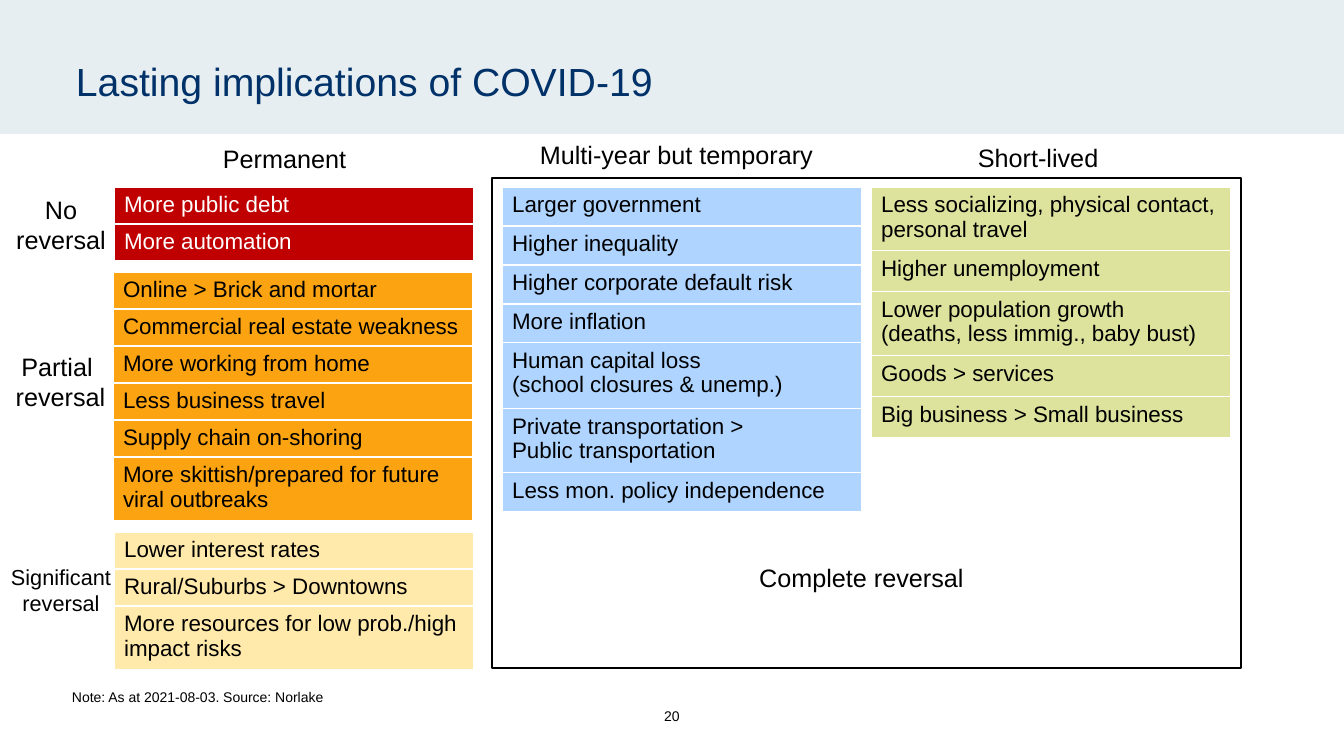
"""Build a slide of the lasting implications of COVID-19, sorted by duration and reversal."""
from lxml import etree
from pptx import Presentation
from pptx.dml.color import RGBColor
from pptx.enum.shapes import MSO_SHAPE
from pptx.enum.text import MSO_ANCHOR, PP_ALIGN
from pptx.oxml.ns import qn
from pptx.util import Pt

SCALE = 914400 / 100.8
RECT = MSO_SHAPE.RECTANGLE
LEFT, CENTER = PP_ALIGN.LEFT, PP_ALIGN.CENTER
TOP, MIDDLE = MSO_ANCHOR.TOP, MSO_ANCHOR.MIDDLE
BLACK = RGBColor(0x00, 0x00, 0x00)
WHITE = RGBColor(0xFF, 0xFF, 0xFF)
NAVY = RGBColor(0x00, 0x31, 0x68)
MIST = RGBColor(0xE7, 0xEE, 0xF1)
RED = RGBColor(0xC0, 0x00, 0x00)
ORANGE = RGBColor(0xFC, 0xA3, 0x11)
CREAM = RGBColor(0xFF, 0xE9, 0xAB)
BLUE = RGBColor(0xAE, 0xD4, 0xFF)
GREEN = RGBColor(0xDD, 0xE3, 0x9D)


def px(*sizes):
    """Turn px lengths into EMU."""
    return [round(size * SCALE) for size in sizes]


def write(frame, text, size, color=BLACK, align=LEFT):
    """Write each line of text as a paragraph."""
    frame.word_wrap = True
    for i, line in enumerate(text.split("\n")):
        para = frame.add_paragraph() if i else frame.paragraphs[0]
        para.alignment = align
        run = para.add_run()
        run.text = line
        run.font.name = "Arial"
        run.font.size = Pt(size)
        run.font.color.rgb = color


deck = Presentation()
deck.slide_width, deck.slide_height = px(1344, 756)
slide = deck.slides.add_slide(deck.slide_layouts[6])
shapes = slide.shapes

band = shapes.add_shape(RECT, *px(0, 0, 1344, 134))
band.shadow.inherit = False
band.fill.solid()
band.fill.fore_color.rgb = MIST
band.line.fill.background()

plain = [
    (76, 40, 1190, 88, "Lasting implications of COVID-19", 28, NAVY, LEFT),
    (72, 683, 318, 28, "Note: As at 2021-08-03. Source: Norlake", 10, BLACK, LEFT),
    (645, 706, 54, 20, "20", 10, BLACK, CENTER),
]
for x, y, w, h, text, size, color, align in plain:
    frame = shapes.add_textbox(*px(x, y, w, h)).text_frame
    frame.margin_left = frame.margin_right = 0
    frame.margin_top = frame.margin_bottom = 0
    frame.vertical_anchor = MIDDLE
    write(frame, text, size, color, align)
    frame.paragraphs[0].line_spacing = 0.9 if size == 28 else 1.0

labels = [
    (213, 138, 145, 40, "Permanent", 18, LEFT),
    (530, 134, 313, 40, "Multi-year but temporary", 18, LEFT),
    (968, 137, 166, 40, "Short-lived", 18, LEFT),
    (0, 189, 122, 71, "No reversal", 18, CENTER),
    (0, 346, 121, 71, "Partial \nreversal", 18, CENTER),
    (0, 559, 122, 62, "Significant reversal", 15.5, CENTER),
    (727, 557, 269, 40, "Complete reversal", 18, CENTER),
]
for x, y, w, h, text, size, align in labels:
    frame = shapes.add_textbox(*px(x, y, w, h)).text_frame
    frame.vertical_anchor = TOP
    write(frame, text, size, align=align)

tables = [
    (114, 187, RED, WHITE, [
        (37, "More public debt"),
        (37, "More automation"),
    ]),
    (502, 187, BLUE, BLACK, [
        (39, "Larger government"),
        (39, "Higher inequality"),
        (39, "Higher corporate default risk"),
        (39, "More inflation"),
        (66, "Human capital loss\n(school closures & unemp.)"),
        (64, "Private transportation >\nPublic transportation"),
        (39, "Less mon. policy independence"),
    ]),
    (871, 187, GREEN, BLACK, [
        (63, "Less socializing, physical contact, personal travel"),
        (41, "Higher unemployment"),
        (64, "Lower population growth\n(deaths, less immig., baby bust)"),
        (41, "Goods > services"),
        (41, "Big business > Small business"),
    ]),
    (114, 532, CREAM, BLACK, [
        (37, "Lower interest rates"),
        (37, "Rural/Suburbs > Downtowns"),
        (63, "More resources for low prob./high impact risks"),
    ]),
    (113, 272, ORANGE, BLACK, [
        (37, "Online > Brick and mortar"),
        (37, "Commercial real estate weakness"),
        (37, "More working from home"),
        (37, "Less business travel"),
        (37, "Supply chain on-shoring"),
        (63, "More skittish/prepared for future viral outbreaks"),
    ]),
]
for x, y, fill, color, rows in tables:
    total = sum(height for height, text in rows)
    table = shapes.add_table(len(rows), 1, *px(x, y, 360, total)).table
    table.first_row = table.horz_banding = False
    for i, (height, text) in enumerate(rows):
        table.rows[i].height = px(height)[0]
        cell = table.cell(i, 0)
        write(cell.text_frame, text, 16, color)
        props = cell._tc.get_or_add_tcPr()
        for side in ("a:lnL", "a:lnR", "a:lnT", "a:lnB"):
            edge = etree.SubElement(props, qn(side), w=str(Pt(1)))
            solid = etree.SubElement(edge, qn("a:solidFill"))
            etree.SubElement(solid, qn("a:srgbClr"), val=str(WHITE))
        cell.fill.solid()
        cell.fill.fore_color.rgb = fill

frame = shapes.add_shape(RECT, *px(492, 178, 749, 490))
frame.shadow.inherit = False
frame.fill.background()
frame.line.color.rgb = BLACK
frame.line.width = Pt(1.75)

deck.save("out.pptx")
